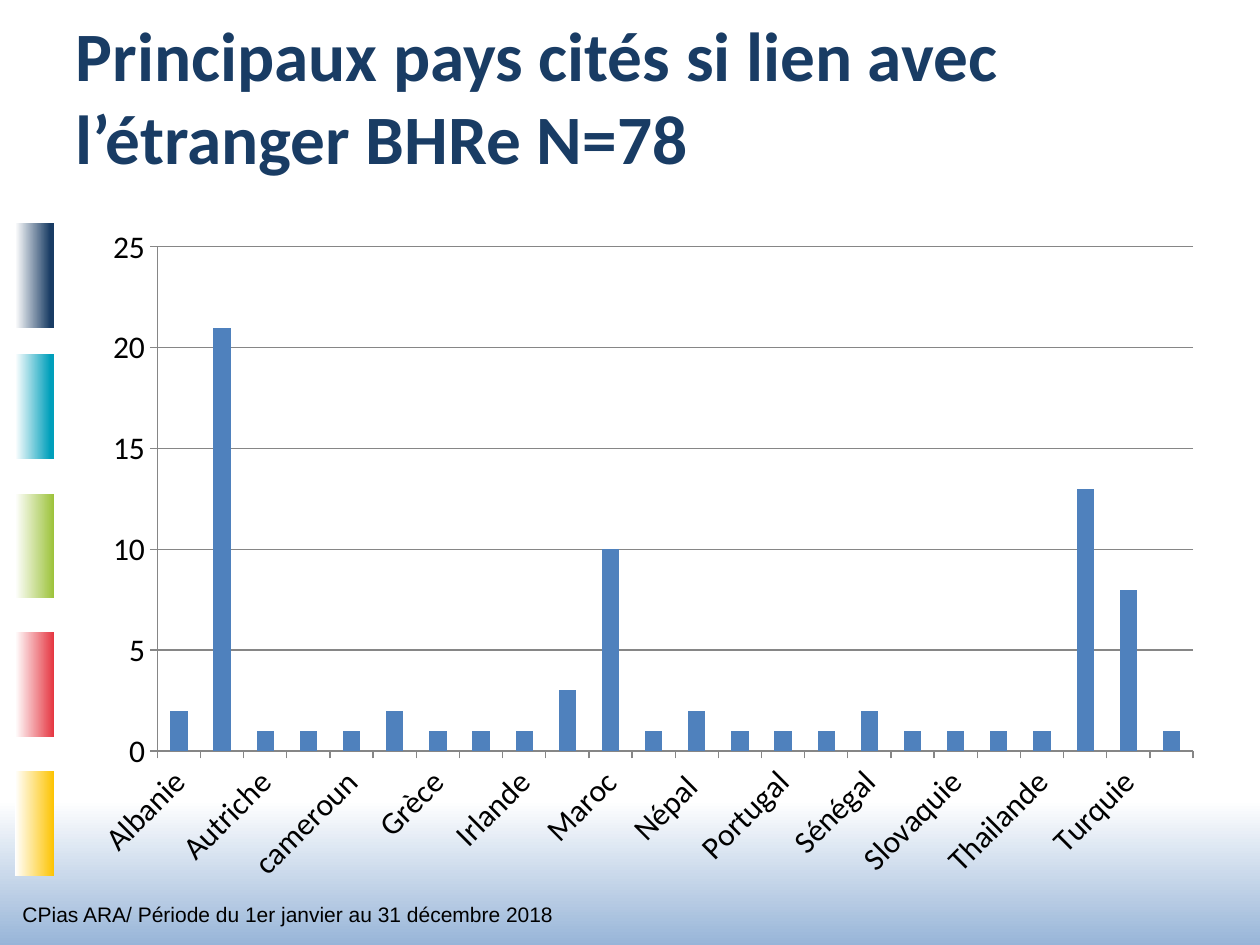
import pptx
import pptx.util
import pptx.dml.color
import pptx.chart.data
import pptx.enum.chart
import pptx.enum.shapes
import pptx.enum.text

COLORS = {"navy": "193C64", "teal": "009FBB", "green": "9CC239", "red": "E53540",
          "yellow": "FDC300", "sky": "95B3D7", "white": "FFFFFF", "black": "000000",
          "bar": "4F81BD", "axis": "868686"}
COUNTS = {"Albanie": 2, "Algérie": 21, "Autriche": 1, "Bulgarie": 1, "cameroun": 1,
          "Géorgie": 2, "Grèce": 1, "Guinée": 1, "Irlande": 1, "Italie": 3,
          "Maroc": 10, "Maurice": 1, "Népal ": 2, "Nouvelle-Zélande": 1,
          "Portugal": 1, "Royaume-Uni": 1, "Sénégal": 2, "Serbie": 1,
          "Slovaquie": 1, "Srilanka": 1, "Thailande": 1, "Tunisie": 13,
          "Turquie": 8, "Viet-Nam": 1}
Inches = pptx.util.Inches
Pt = pptx.util.Pt


def rgb(name):
    return pptx.dml.color.RGBColor.from_string(COLORS[name])


def add_fade(s, box, rotation, color, start):
    sp = s.shapes.add_shape(pptx.enum.shapes.MSO_SHAPE.RECTANGLE, *map(Inches, box))
    sp.rotation = rotation
    sp.shadow.inherit = False
    sp.line.fill.background()
    sp.fill.gradient()
    sp.fill.gradient_angle = 270
    for stop, name, position in zip(sp.fill.gradient_stops, (color, "white"), (start, 1)):
        stop.color.rgb = rgb(name)
        stop.position = position


prs = pptx.Presentation()
prs.slide_width, prs.slide_height = Inches(10), Inches(7.5)
s = prs.slides.add_slide(prs.slide_layouts[5])
s.background.fill.solid()
s.background.fill.fore_color.rgb = rgb("white")

add_fade(s, (0, 6.35, 10, 1.18), 180, "sky", 0)
tabs = [("navy", 2.03, 0.1), ("teal", 3.07, 0.1), ("green", 4.18, 0),
        ("red", 5.28, 0), ("yellow", 6.38, 0)]
for color, top, start in tabs:
    add_fade(s, (-0.14, top, 0.83, 0.31), 90, color, start)

title = s.shapes.title
title.left, title.top, title.width, title.height = map(Inches, (0.5, 0.13, 9, 1.25))
tf = title.text_frame
tf.text = "Principaux pays cités si lien avec l’étranger BHRe N=78"
tf.word_wrap = True
tf.auto_size = pptx.enum.text.MSO_AUTO_SIZE.NONE
tf.vertical_anchor = pptx.enum.text.MSO_ANCHOR.MIDDLE
p = tf.paragraphs[0]
p.alignment = pptx.enum.text.PP_ALIGN.LEFT
p.font.name, p.font.size, p.font.bold = "Calibri", Pt(39.6), True
p.font.color.rgb = rgb("navy")

data = pptx.chart.data.CategoryChartData()
data.categories = list(COUNTS)
data.add_series("Series 1", list(COUNTS.values()))
chart = s.shapes.add_chart(pptx.enum.chart.XL_CHART_TYPE.COLUMN_CLUSTERED,
                           *map(Inches, (0.59, 1.7, 9.06, 5.41)), data).chart
chart.has_legend = False
chart.has_title = False
chart.font.name, chart.font.size = "Calibri", Pt(18)
chart.font.color.rgb = rgb("black")
plot = chart.plots[0]
plot.gap_width = 150
plot.vary_by_categories = False
plot.series[0].format.fill.solid()
plot.series[0].format.fill.fore_color.rgb = rgb("bar")

chart.value_axis.minimum_scale = 0
chart.value_axis.maximum_scale = 25
chart.value_axis.major_unit = 5
chart.value_axis.has_major_gridlines = True
for axis in (chart.category_axis, chart.value_axis):
    axis.major_tick_mark = pptx.enum.chart.XL_TICK_MARK.OUTSIDE
    axis.minor_tick_mark = pptx.enum.chart.XL_TICK_MARK.NONE
for part in (chart.category_axis, chart.value_axis, chart.value_axis.major_gridlines):
    part.format.line.color.rgb = rgb("axis")
    part.format.line.width = Pt(0.75)

sp = s.shapes.add_textbox(*map(Inches, (0.08, 7.11, 4.92, 0.3)))
tf = sp.text_frame
tf.word_wrap = True
tf.auto_size = pptx.enum.text.MSO_AUTO_SIZE.SHAPE_TO_FIT_TEXT
p = tf.paragraphs[0]
p.text = "CPias ARA/ Période du 1er janvier au 31 décembre 2018"
p.font.name, p.font.size = "Arial", Pt(12)
p.font.color.rgb = rgb("black")

prs.save("out.pptx")
